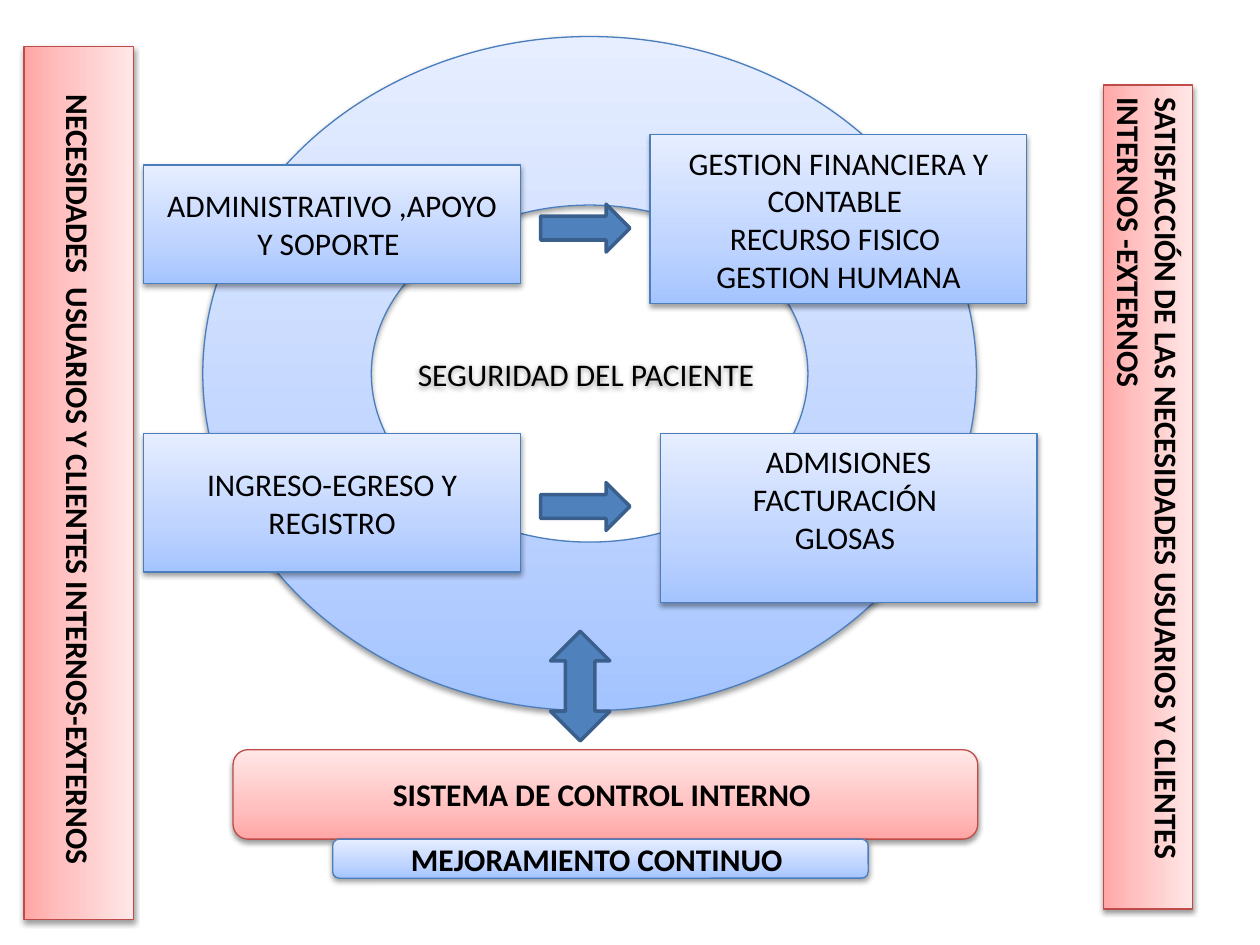
"""Build the process map slide for patient safety."""
from lxml.etree import SubElement
from pptx import Presentation
from pptx.dml.color import RGBColor
from pptx.enum.shapes import MSO_SHAPE as KIND
from pptx.enum.text import MSO_ANCHOR, MSO_AUTO_SIZE, PP_ALIGN
from pptx.oxml.ns import qn
from pptx.util import Inches, Pt

BLACK = RGBColor(0x00, 0x00, 0x00)
STEEL = RGBColor(0x4F, 0x81, 0xBD)
NAVY = RGBColor(0x3A, 0x5F, 0x8C)
BLUE = (RGBColor(0x4B, 0x7E, 0xBC), RGBColor(0xA4, 0xC4, 0xFF),
        RGBColor(0xBF, 0xD4, 0xFF), RGBColor(0xE6, 0xEE, 0xFF))
RED = (RGBColor(0xBF, 0x4C, 0x48), RGBColor(0xFF, 0xA6, 0xA5),
       RGBColor(0xFF, 0xC0, 0xBF), RGBColor(0xFF, 0xE7, 0xE7))
STOPS = (0, 35, 100)
FONT = {"name": "Calibri", "size": Pt(18)}

deck = Presentation()
deck.slide_width, deck.slide_height = Inches(10), Inches(7.5)
slide = deck.slides.add_slide(deck.slide_layouts[6])


def add_tag(root, tag, **vals):
    return SubElement(root, qn(tag), {key: str(val) for key, val in vals.items()})


def add_box(kind, at, tone, lines, bold=False):
    box = slide.shapes.add_shape(kind, *map(Inches, at))
    edge, *shades = tone
    box.line.color.rgb = edge
    box.line.width = Pt(0.75)
    box.fill.gradient()
    box.fill.gradient_angle = 90
    ramp = box._element.spPr.find(qn("a:gradFill")).find(qn("a:gsLst"))
    for stop in list(ramp):
        ramp.remove(stop)
    for pos, shade in zip(STOPS, shades):
        add_tag(add_tag(ramp, "a:gs", pos=pos * 1000), "a:srgbClr", val=shade)

    box.shadow.inherit = False
    glow = add_tag(box._element.spPr.find(qn("a:effectLst")), "a:outerShdw",
                   blurRad=Pt(3.1), dist=Pt(1.6), dir=5400000, rotWithShape=0)
    add_tag(add_tag(glow, "a:srgbClr", val=BLACK), "a:alpha", val=38000)

    frame = box.text_frame
    frame.word_wrap = True
    frame.vertical_anchor = MSO_ANCHOR.MIDDLE
    frame.text = "\n".join(lines)
    for para in frame.paragraphs:
        para.alignment = PP_ALIGN.CENTER
        for run in para.runs:
            for key, val in FONT.items():
                setattr(run.font, key, val)
            run.font.bold = bold
            run.font.color.rgb = BLACK
    return box


add_box(KIND.DONUT, (1.61, 0.29, 6.14, 5.35), BLUE, ["SEGURIDAD DEL PACIENTE "])

for left, top, high, lines in (
    (1.14, 1.31, 0.94, ["ADMINISTRATIVO ,APOYO Y SOPORTE "]),
    (5.16, 1.07, 1.34, ["GESTION FINANCIERA Y CONTABLE ", "RECURSO FISICO ",
                        "GESTION HUMANA"]),
    (1.14, 3.44, 1.1, ["INGRESO-EGRESO Y REGISTRO"]),
    (5.24, 3.44, 1.34, ["ADMISIONES", "FACTURACIÓN ", "GLOSAS "]),
):
    card = add_box(KIND.RECTANGLE, (left, top, 2.99, high), BLUE, lines)
card.text_frame.margin_bottom = Inches(0.35)

add_box(KIND.ROUNDED_RECTANGLE, (1.85, 5.95, 5.91, 0.71), RED,
        ["SISTEMA DE CONTROL INTERNO "], True)

for kind, *at in (
    (KIND.RIGHT_ARROW, 4.29, 1.62, 0.71, 0.38),
    (KIND.RIGHT_ARROW, 4.29, 3.83, 0.71, 0.38),
    (KIND.UP_DOWN_ARROW, 4.37, 5.01, 0.47, 0.87),
):
    arrow = slide.shapes.add_shape(kind, *map(Inches, at))
    arrow.shadow.inherit = False
    arrow.fill.solid()
    arrow.fill.fore_color.rgb = STEEL
    arrow.line.color.rgb = NAVY
    arrow.line.width = Pt(2)

add_box(KIND.ROUNDED_RECTANGLE, (2.64, 6.66, 4.25, 0.31), BLUE,
        ["MEJORAMIENTO CONTINUO "], True)

goal = add_box(
    KIND.RECTANGLE, (5.84, 3.59, 6.54, 0.71), RED,
    ["SATISFACCIÓN DE LAS NECESIDADES USUARIOS Y CLIENTES INTERNOS -EXTERNOS"], True)
goal.text_frame.vertical_anchor = MSO_ANCHOR.TOP
goal.text_frame.auto_size = MSO_AUTO_SIZE.SHAPE_TO_FIT_TEXT
goal.text_frame.paragraphs[0].alignment = PP_ALIGN.LEFT
need = add_box(KIND.RECTANGLE, (-2.84, 3.4, 6.93, 0.87), RED,
               ["NECESIDADES  USUARIOS Y CLIENTES INTERNOS-EXTERNOS "], True)
for bar in (goal, need):
    bar.rotation = 90

deck.save("out.pptx")
